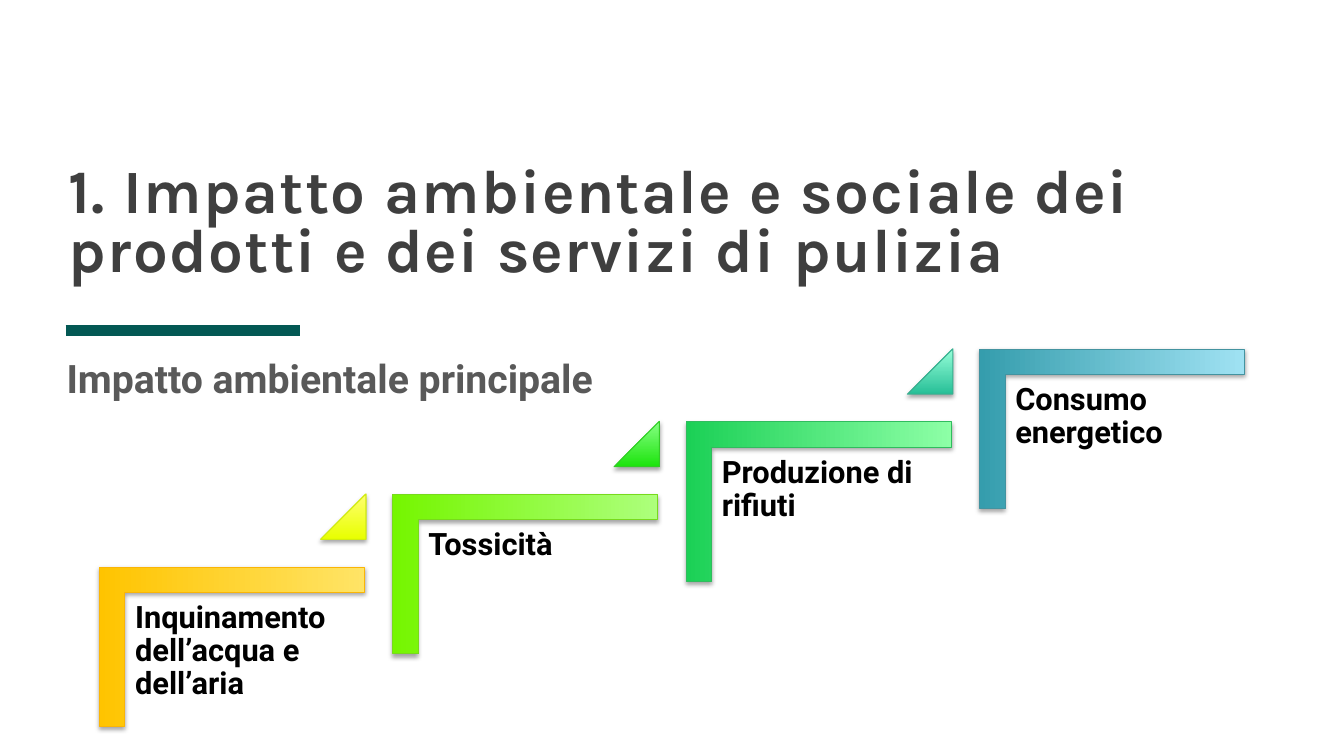
from dataclasses import dataclass

from lxml import etree
from pptx import Presentation
from pptx.dml.color import RGBColor
from pptx.enum.shapes import MSO_CONNECTOR as Connector, MSO_SHAPE as Shape
from pptx.enum.text import MSO_ANCHOR as Anchor, MSO_AUTO_SIZE as AutoSize, PP_ALIGN as Align
from pptx.oxml.ns import qn
from pptx.util import Inches, Pt


@dataclass(frozen=True)
class Theme:
    heading_font: str = "Karla"
    body_font: str = "Roboto"
    title_color: str = "3F3F3F"
    subtitle_color: str = "595959"
    label_color: str = "000000"
    accent: str = "035854"
    shadow: str = "000000"
    title_size: float = 44
    subtitle_size: float = 28
    label_size: float = 22
    title_tracking: int = 100


# Label, then (dark, light, outline) for the bracket and for the triangle after it
STEPS = [
    ("Inquinamento dell’acqua e dell’aria",
     ("FFC400", "FFE466", "FAB506"), ("E8FF00", "FFFF70", "D0EB10")),
    ("Tossicità",
     ("75F600", "ADFF7C", "77DA1C"), ("1CE40D", "87FF84", "32CC26")),
    ("Produzione di rifiuti",
     ("1BD056", "8DFFA6", "30BC5E"), ("27BF97", "97FFD9", "39AE8F")),
    ("Consumo energetico", ("359DAD", "A0E2F3", "4393A0"), None),
]
STEP_RIGHT, STEP_UP = 2.91, 0.72


def set_all(target, values):
    for name, value in values.items():
        setattr(target, name, value)


class SlideBuilder:
    def __init__(self, slide, theme):
        self.slide = slide
        self.theme = theme

    def place(self, shape, box):
        names = ("left", "top", "width", "height")
        set_all(shape, dict(zip(names, map(Inches, box))))

    def fill_text(self, shape, text, font, size, color, anchor, insets, line_spacing):
        frame = shape.text_frame
        sides = ("margin_left", "margin_top", "margin_right", "margin_bottom")
        set_all(frame, dict(zip(sides, map(Inches, insets))))
        set_all(frame, {"word_wrap": True, "auto_size": AutoSize.NONE,
                        "vertical_anchor": anchor})
        paragraph = frame.paragraphs[0]
        set_all(paragraph, {"alignment": Align.LEFT, "space_before": Pt(0),
                            "line_spacing": line_spacing})
        run = paragraph.add_run()
        run.text = text
        set_all(run.font, {"name": font, "size": Pt(size), "bold": True})
        run.font.color.rgb = RGBColor.from_string(color)
        return paragraph

    def title(self, text, box, insets):
        theme, shape = self.theme, self.slide.shapes.title
        self.place(shape, box)
        paragraph = self.fill_text(shape, text, theme.heading_font, theme.title_size,
                                   theme.title_color, Anchor.BOTTOM, insets, 0.8)
        properties = paragraph.runs[0]._r.get_or_add_rPr()
        properties.set("spc", str(theme.title_tracking))

    def subtitle(self, text, box):
        theme, shape = self.theme, self.slide.placeholders[1]
        self.place(shape, box)
        paragraph = self.fill_text(shape, text, theme.body_font, theme.subtitle_size,
                                   theme.subtitle_color, Anchor.MIDDLE,
                                   (0.1, 0.05, 0.1, 0.05), 1.0)
        properties = paragraph._p.get_or_add_pPr()
        properties.set("marL", "0")
        properties.set("indent", "0")
        etree.SubElement(properties, qn("a:buNone"))
        shape.text_frame.auto_size = AutoSize.SHAPE_TO_FIT_TEXT

    def label(self, text, box):
        theme = self.theme
        shape = self.slide.shapes.add_textbox(*map(Inches, box))
        self.fill_text(shape, text, theme.body_font, theme.label_size,
                       theme.label_color, Anchor.TOP, (0.09,) * 4, 0.9)

    def rule(self, left, right, y, width):
        line = self.slide.shapes.add_connector(
            Connector.STRAIGHT, *map(Inches, (left, y, right, y)))
        line.line.color.rgb = RGBColor.from_string(self.theme.accent)
        line.line.width = Pt(width)
        etree.SubElement(line._element.spPr, qn("a:effectLst"))

    def gradient_shape(self, kind, box, colors, adjustments, rotation=0):
        """Add a shape shaded from dark at its own bottom to light at its top."""
        dark, light, outline = colors
        shape = self.slide.shapes.add_shape(kind, *map(Inches, box))
        shape.rotation = rotation
        for index, value in enumerate(adjustments):
            shape.adjustments[index] = value
        shape.fill.gradient()
        shape.fill.gradient_angle = 90
        for stop, color in zip(shape.fill.gradient_stops, (dark, light)):
            stop.color.rgb = RGBColor.from_string(color)
        shape.line.color.rgb = RGBColor.from_string(outline)
        shape.line.width = Pt(0.75)
        self.drop_shadow(shape)

    def drop_shadow(self, shape):
        shape.shadow.inherit = False
        effects = shape._element.spPr.find(qn("a:effectLst"))
        shadow = etree.SubElement(effects, qn("a:outerShdw"), {
            "blurRad": str(Pt(3.1)), "dist": str(Pt(1.8)),
            "dir": "5400000", "rotWithShape": "0"})
        color = etree.SubElement(shadow, qn("a:srgbClr"), val=self.theme.shadow)
        etree.SubElement(color, qn("a:alpha"), val="35000")

    def step(self, index, text, bracket, triangle):
        right, up = index * STEP_RIGHT, index * STEP_UP
        self.gradient_shape(Shape.CORNER, (1.51 + right, 5.1 - up, 1.58, 2.63),
                            bracket, (0.16, 0.16), rotation=90)
        self.label(text, (1.25 + right, 5.88 - up, 2.37, 2.08))
        if triangle:
            self.gradient_shape(Shape.ISOSCELES_TRIANGLE,
                                (3.18 + right, 4.9 - up, 0.45, 0.45), triangle, (1,))


def main():
    presentation = Presentation()
    set_all(presentation, {"slide_width": Inches(13.33), "slide_height": Inches(7.5)})
    slide = presentation.slides.add_slide(presentation.slide_layouts[1])
    builder = SlideBuilder(slide, Theme())
    builder.rule(0.65, 2.98, 3.28, 8)
    builder.title("1. Impatto ambientale e sociale dei prodotti e dei servizi di pulizia",
                  (0.68, 1.53, 12.48, 1.89), (0, 0, 1, 0.6))
    builder.subtitle("Impatto ambientale principale", (0.56, 3.46, 5.71, 0.57))
    for index, step in enumerate(STEPS):
        builder.step(index, *step)
    presentation.save("out.pptx")


if __name__ == "__main__":
    main()
